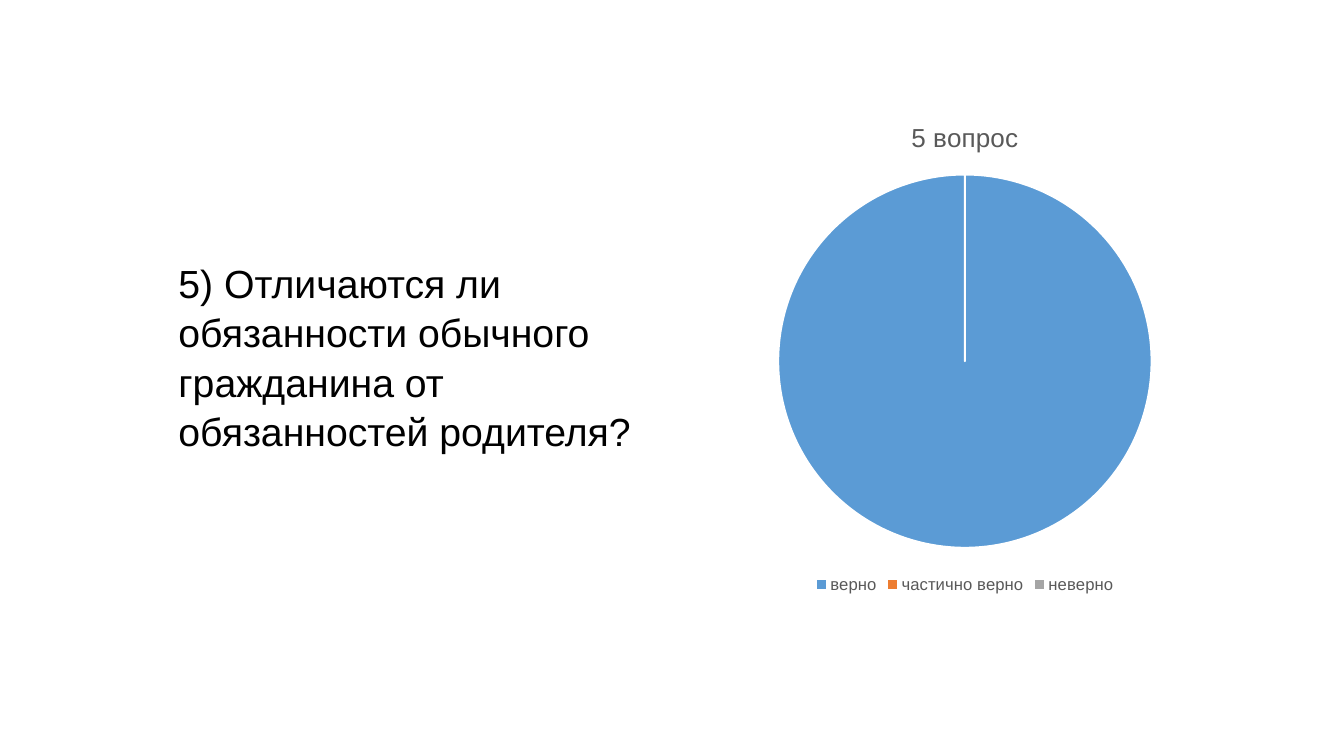
from dataclasses import dataclass

from lxml.etree import SubElement
from pptx import Presentation
from pptx.chart.chart import Chart
from pptx.chart.data import CategoryChartData
from pptx.dml.color import RGBColor
from pptx.enum.chart import XL_CHART_TYPE, XL_LEGEND_POSITION
from pptx.enum.text import MSO_ANCHOR, MSO_AUTO_SIZE, PP_ALIGN
from pptx.oxml.ns import qn
from pptx.slide import Slide
from pptx.text.text import Font, TextFrame
from pptx.util import Inches, Pt


@dataclass(frozen=True)
class Theme:
    font: str = "Arial"
    text: str = "000000"
    muted: str = "595959"
    background: str = "FFFFFF"
    question_size: float = 28
    chart_title_size: float = 18.6
    legend_size: float = 11.9
    chart_size: float = 10


@dataclass(frozen=True)
class Answer:
    label: str
    percent: int
    color: str


THEME = Theme()
CHART_TITLE = "5 вопрос"
QUESTION = "5) Отличаются ли обязанности обычного гражданина от обязанностей родителя?"
ANSWERS = [
    Answer("верно", 100, "5B9BD5"),
    Answer("частично верно", 0, "ED7D31"),
    Answer("неверно", 0, "A5A5A5"),
]
# Share of the chart area taken by the pie
PIE_LAYOUT = {"x": 0.18, "y": 0.15, "w": 0.64, "h": 0.75}


def format_font(font: Font, size: float, color: str) -> None:
    font.name = THEME.font
    font.size = Pt(size)
    font.bold = False
    font.color.rgb = RGBColor.from_string(color)


def write_text(frame: TextFrame, text: str, *, size: float, color: str,
               align: PP_ALIGN, line_spacing: float = 1.0) -> None:
    paragraph = frame.paragraphs[0]
    paragraph.alignment = align
    paragraph.line_spacing = line_spacing
    run = paragraph.add_run()
    run.text = text
    format_font(run.font, size, color)


def add_question(slide: Slide) -> None:
    shape = slide.shapes.title
    shape.left, shape.top = Inches(1.67), Inches(2.5)
    shape.width, shape.height = Inches(5), Inches(1.93)
    frame = shape.text_frame
    frame.word_wrap = True
    frame.auto_size = MSO_AUTO_SIZE.SHAPE_TO_FIT_TEXT
    frame.vertical_anchor = MSO_ANCHOR.TOP
    write_text(frame, QUESTION, size=THEME.question_size, color=THEME.text,
               align=PP_ALIGN.LEFT, line_spacing=1.05)


def place_pie(chart: Chart) -> None:
    plot_area = chart.element.chart.plotArea
    layout = plot_area.find(qn("c:layout"))
    if layout is None:
        layout = SubElement(plot_area, qn("c:layout"))
        plot_area.insert(0, layout)
    manual = SubElement(layout, qn("c:manualLayout"))
    settings = {"layoutTarget": "inner", "xMode": "edge", "yMode": "edge", **PIE_LAYOUT}
    for name, value in settings.items():
        SubElement(manual, qn(f"c:{name}")).set("val", str(value))


def add_answer_chart(slide: Slide) -> None:
    data = CategoryChartData()
    data.categories = [answer.label for answer in ANSWERS]
    data.add_series(CHART_TITLE, [answer.percent for answer in ANSWERS])
    chart = slide.shapes.add_chart(
        XL_CHART_TYPE.PIE, Inches(6.67), Inches(0.99), Inches(5.8), Inches(4.94), data
    ).chart
    format_font(chart.font, THEME.chart_size, THEME.text)

    # Title and legend
    chart.has_title = True
    write_text(chart.chart_title.text_frame, CHART_TITLE, size=THEME.chart_title_size,
               color=THEME.muted, align=PP_ALIGN.CENTER)
    chart.chart_title.include_in_layout = False
    chart.has_legend = True
    chart.legend.position = XL_LEGEND_POSITION.BOTTOM
    chart.legend.include_in_layout = False
    format_font(chart.legend.font, THEME.legend_size, THEME.muted)

    # Slices
    plot = chart.plots[0]
    plot.vary_by_categories = True
    for index, answer in enumerate(ANSWERS):
        slice_format = plot.series[0].points[index].format
        slice_format.fill.solid()
        slice_format.fill.fore_color.rgb = RGBColor.from_string(answer.color)
        slice_format.line.color.rgb = RGBColor.from_string(THEME.background)
        slice_format.line.width = Pt(1.5)
    place_pie(chart)


def main() -> None:
    presentation = Presentation()
    presentation.slide_width = Inches(13.33)
    presentation.slide_height = Inches(7.5)
    slide = presentation.slides.add_slide(presentation.slide_layouts.get_by_name("Title Only"))
    add_answer_chart(slide)
    add_question(slide)
    presentation.save("out.pptx")


if __name__ == "__main__":
    main()
